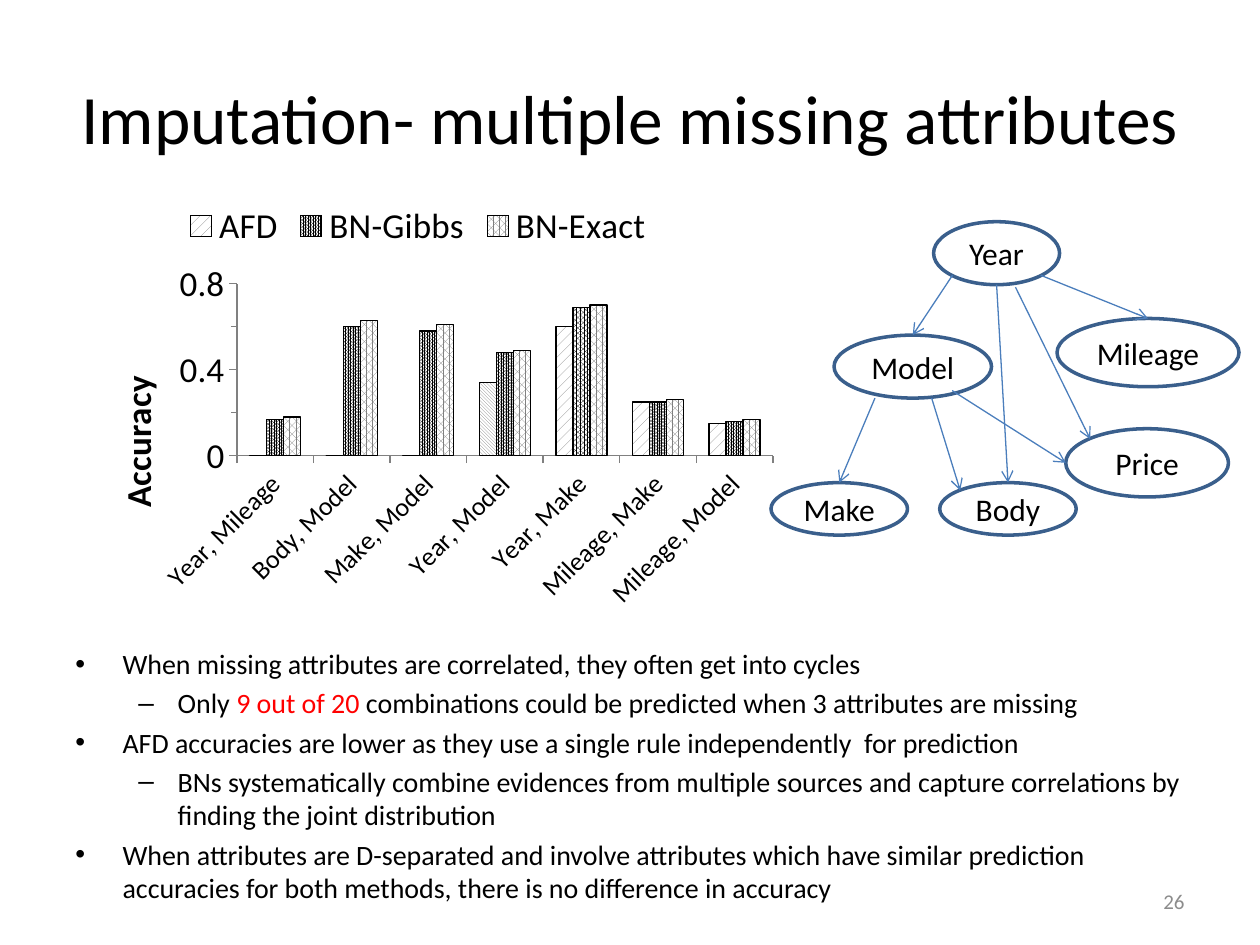
"""Build the slide on imputing multiple missing attributes."""
from lxml import etree
from pptx import Presentation
from pptx.chart.data import CategoryChartData
from pptx.dml.color import RGBColor
from pptx.enum.chart import XL_CHART_TYPE, XL_LEGEND_POSITION, XL_TICK_MARK
from pptx.enum.dml import MSO_PATTERN
from pptx.enum.shapes import MSO_CONNECTOR, MSO_SHAPE
from pptx.enum.text import MSO_ANCHOR, PP_ALIGN
from pptx.oxml.ns import qn
from pptx.util import Pt

FONT = "Calibri"
BLACK, WHITE, GRAY, RED = "000000", "FFFFFF", "808080", "FF0000"
NODE_LINE, EDGE_LINE, NUMBER_COLOR = "3A5F8C", "4B7EBC", "8C8C8C"
MIDDLE, TOP = MSO_ANCHOR.MIDDLE, MSO_ANCHOR.TOP
LEFT, CENTER, RIGHT = PP_ALIGN.LEFT, PP_ALIGN.CENTER, PP_ALIGN.RIGHT
OUTSIDE, NO_TICK = XL_TICK_MARK.OUTSIDE, XL_TICK_MARK.NONE

TITLE = "Imputation- multiple missing attributes"
BULLETS = [
    (0, [("When missing attributes are correlated, they often get into cycles", BLACK)]),
    (1, [("Only ", BLACK), ("9 out of 20 ", RED),
         ("combinations could be predicted when 3 attributes are missing", BLACK)]),
    (0, [("AFD accuracies are lower as they use a single rule independently  for prediction", BLACK)]),
    (1, [("BNs systematically combine evidences from multiple sources and capture "
          "correlations by finding the joint distribution", BLACK)]),
    (0, [("When attributes are D-separated and involve attributes which have similar "
          "prediction accuracies for both methods, there is no difference in accuracy", BLACK)]),
]
BULLET_STYLES = [("•", 27, -27), ("–", 58.5, -22.5)]

CATEGORIES = ["Year, Mileage", "Body, Model", "Make, Model", "Year, Model",
              "Year, Make", "Mileage, Make", "Mileage, Model"]
SERIES = [
    ("AFD", [0, 0, 0, 0.34, 0.6, 0.25, 0.15], MSO_PATTERN.PERCENT_20, GRAY,
     {3: MSO_PATTERN.LIGHT_DOWNWARD_DIAGONAL}),
    ("BN-Gibbs", [0.17, 0.6, 0.58, 0.48, 0.69, 0.25, 0.16], MSO_PATTERN.PERCENT_90, BLACK,
     {4: MSO_PATTERN.PERCENT_80}),
    ("BN-Exact", [0.18, 0.63, 0.61, 0.49, 0.7, 0.26, 0.17], MSO_PATTERN.PERCENT_70, GRAY, {}),
]

NODES = {
    "Year": (533.5, 126.7, 72, 36),
    "Model": (476.6, 191.5, 90, 36),
    "Make": (440.6, 275.8, 78, 30),
    "Body": (537, 275.8, 78, 30),
    "Mileage": (604, 182, 104, 39),
    "Price": (609, 245, 93, 39),
}
NODE_TOP, NODE_BOTTOM, NODE_LEFT = (0.5, 0), (0.5, 1), (0, 0.5)
TOP_LEFT, BOTTOM_LEFT, BOTTOM_RIGHT = (0.15, 0.15), (0.15, 0.85), (0.85, 0.85)
EDGES = [
    ("Year", BOTTOM_LEFT, "Model", NODE_TOP),
    ("Model", (0.26, 1), "Make", NODE_TOP),
    ("Model", (0.62, 1), "Body", TOP_LEFT),
    ("Year", BOTTOM_RIGHT, "Mileage", NODE_TOP),
    ("Year", NODE_BOTTOM, "Body", NODE_TOP),
    ("Model", (0.75, 0.88), "Price", NODE_LEFT),
    ("Year", (0.65, 1.04), "Price", TOP_LEFT),
]


def rgb(value):
    return RGBColor.from_string(value)


def points(values):
    return [Pt(value) for value in values]


def set_font(font, size, color=BLACK, bold=False):
    font.name, font.size, font.bold = FONT, Pt(size), bold
    font.color.rgb = rgb(color)


def add_text(slide, box, text, size, color, align):
    frame = slide.shapes.add_textbox(*points(box)).text_frame
    frame.word_wrap = True
    frame.vertical_anchor = MIDDLE
    paragraph = frame.paragraphs[0]
    paragraph.text, paragraph.alignment = text, align
    set_font(paragraph.font, size, color)


def add_bullets(slide, box):
    frame = slide.shapes.add_textbox(*points(box)).text_frame
    frame.word_wrap = True
    frame.vertical_anchor = TOP
    for index, (level, runs) in enumerate(BULLETS):
        paragraph = frame.paragraphs[0] if index == 0 else frame.add_paragraph()
        paragraph.level, paragraph.alignment = level, LEFT
        paragraph.space_before = Pt(3.2)
        mark, margin, indent = BULLET_STYLES[level]
        properties = paragraph._p.get_or_add_pPr()
        properties.set("marL", str(Pt(margin)))
        properties.set("indent", str(Pt(indent)))
        etree.SubElement(properties, qn("a:buFont"), typeface="Arial")
        etree.SubElement(properties, qn("a:buChar"), char=mark)
        set_font(paragraph.font, 16)
        for text, color in runs:
            run = paragraph.add_run()
            run.text = text
            if color != BLACK:
                run.font.color.rgb = rgb(color)


def set_layout(element, inner=False, **fractions):
    for old in element.findall(qn("c:layout")):
        element.remove(old)
    layout = etree.Element(qn("c:layout"))
    manual = etree.SubElement(layout, qn("c:manualLayout"))
    if inner:
        etree.SubElement(manual, qn("c:layoutTarget"), val="inner")
    for name in ("x", "y"):
        etree.SubElement(manual, qn(f"c:{name}Mode"), val="edge")
    for name, value in fractions.items():
        etree.SubElement(manual, qn(f"c:{name}"), val=str(value))
    before = element.find(qn("c:tx"))
    if before is None:
        before = element.find(qn("c:legendPos"))
    if before is None:
        element.insert(0, layout)
    else:
        before.addnext(layout)


def set_pattern(fill, pattern, color):
    fill.patterned()
    fill.pattern = pattern
    fill.fore_color.rgb, fill.back_color.rgb = rgb(color), rgb(WHITE)


def set_outline(line, color, width):
    line.color.rgb, line.width = rgb(color), Pt(width)


def style_axis(axis, size, minor):
    axis.has_major_gridlines = False
    axis.major_tick_mark, axis.minor_tick_mark = OUTSIDE, minor
    set_font(axis.tick_labels.font, size)
    set_outline(axis.format.line, GRAY, 0.75)


def add_accuracy_chart(slide, box):
    data = CategoryChartData()
    data.categories = CATEGORIES
    for name, values, *_ in SERIES:
        data.add_series(name, values)
    chart = slide.shapes.add_chart(XL_CHART_TYPE.COLUMN_CLUSTERED, *points(box), data).chart
    set_font(chart.font, 20)
    chart.has_title = False
    chart.has_legend = True
    chart.legend.position = XL_LEGEND_POSITION.TOP
    chart.legend.include_in_layout = False
    set_font(chart.legend.font, 20)
    plot = chart.plots[0]
    plot.gap_width, plot.overlap, plot.vary_by_categories = 150, 0, False
    for series, (_, _, pattern, color, exceptions) in zip(plot.series, SERIES):
        formats = [(series.format, pattern)]
        formats += [(series.points[index].format, other) for index, other in exceptions.items()]
        for target, chosen in formats:
            set_pattern(target.fill, chosen, color)
            set_outline(target.line, BLACK, 0.75)
    style_axis(chart.category_axis, 15, NO_TICK)
    labels = chart.category_axis._element.find(qn("c:txPr"))
    labels.find(qn("a:bodyPr")).set("rot", "-2700000")
    axis = chart.value_axis
    style_axis(axis, 20, OUTSIDE)
    axis.minimum_scale, axis.maximum_scale, axis.major_unit, axis.minor_unit = 0, 0.8, 0.4, 0.2
    axis.tick_labels.number_format, axis.tick_labels.number_format_is_linked = "General", False
    title = axis.axis_title
    title.text_frame.text = "Accuracy"
    set_font(title.text_frame.paragraphs[0].font, 20, bold=True)
    title.text_frame._txBody.find(qn("a:bodyPr")).set("rot", "-5400000")
    set_layout(title._element, x=0.06, y=0.42)
    set_layout(chart.legend._element, x=0.16, y=0.03, w=0.66, h=0.11)
    set_layout(plot._element.getparent(), inner=True, x=0.24, y=0.22, w=0.74, h=0.4)


def add_node(slide, name, box):
    shape = slide.shapes.add_shape(MSO_SHAPE.OVAL, *points(box))
    shape.shadow.inherit = False
    shape.fill.solid()
    shape.fill.fore_color.rgb = rgb(WHITE)
    set_outline(shape.line, NODE_LINE, 2)
    frame = shape.text_frame
    frame.word_wrap, frame.vertical_anchor = False, MIDDLE
    paragraph = frame.paragraphs[0]
    paragraph.text, paragraph.alignment = name, CENTER
    set_font(paragraph.font, 18)


def node_point(name, position):
    left, top, width, height = NODES[name]
    return points((left + position[0] * width, top + position[1] * height))


def add_edge(slide, source, start, target, end):
    connector = slide.shapes.add_connector(
        MSO_CONNECTOR.STRAIGHT, *node_point(source, start), *node_point(target, end))
    set_outline(connector.line, EDGE_LINE, 0.75)
    etree.SubElement(connector.line._get_or_add_ln(), qn("a:tailEnd"), type="arrow")
    etree.SubElement(connector._element.spPr, qn("a:effectLst"))


def main():
    presentation = Presentation()
    presentation.slide_width, presentation.slide_height = Pt(720), Pt(540)
    slide = presentation.slides.add_slide(presentation.slide_layouts[6])
    add_text(slide, (36, 21.6, 648, 90), TITLE, 39.6, BLACK, CENTER)
    add_bullets(slide, (36, 366, 648, 116.6))
    add_accuracy_chart(slide, (36, 108, 414, 246))
    for name, box in NODES.items():
        add_node(slide, name, box)
    for edge in EDGES:
        add_edge(slide, *edge)
    add_text(slide, (516, 500.5, 168, 28.8), "26", 12, NUMBER_COLOR, RIGHT)
    presentation.save("out.pptx")


if __name__ == "__main__":
    main()
